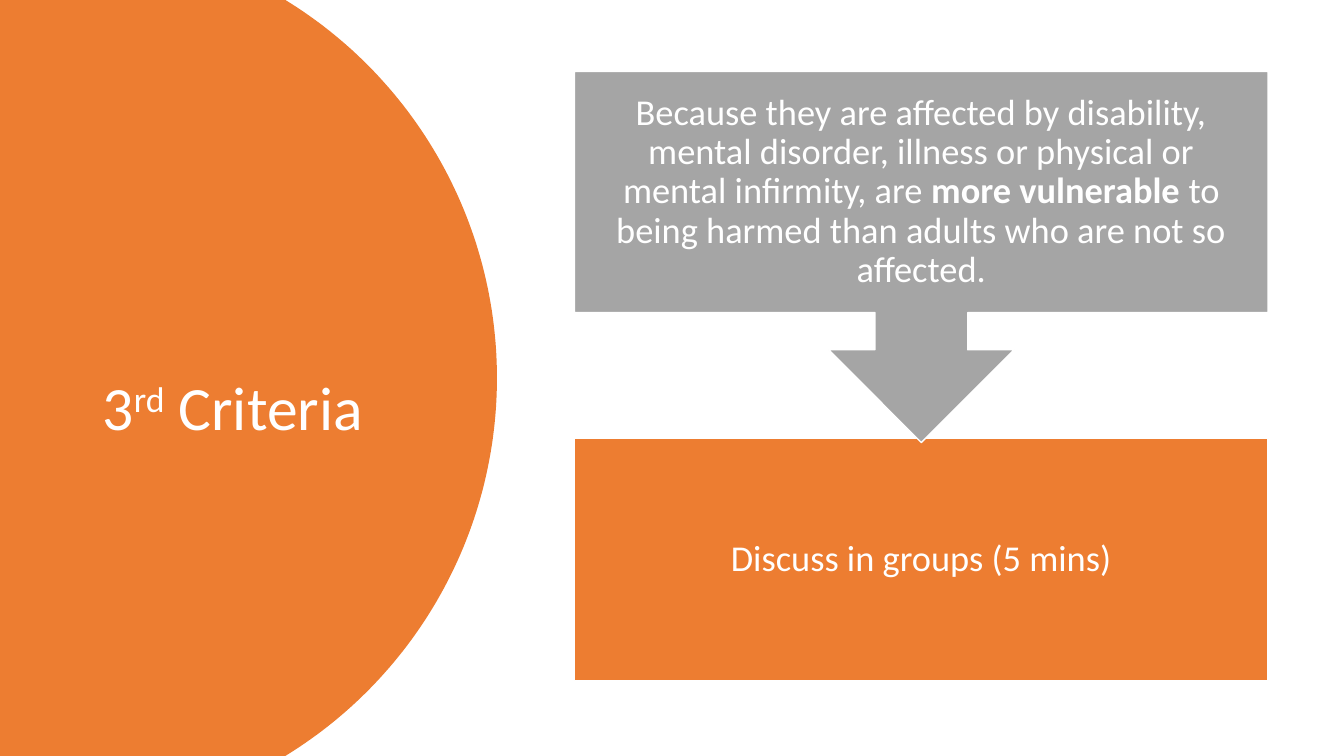
import math
from pptx import Presentation
from pptx.dml.color import RGBColor
from pptx.enum import shapes, text
from pptx.util import Pt

WHITE, ORANGE, GREY = "FFFFFF", "ED7D31", "A5A5A5"
TITLE = [("3", {}), ("rd", {"baseline": "30000"}), (" Criteria", {})]
BOXES = [
    (shapes.MSO_SHAPE.RECTANGLE, ORANGE, 313.2, 172.8,
     [("Discuss in groups (5 mins)", {})]),
    (shapes.MSO_SHAPE.DOWN_ARROW_CALLOUT, GREY, 51.1, 265,
     [("Because they are affected by disability, mental disorder, illness "
       "or physical or mental infirmity, are ", {}),
      ("more vulnerable ", {"b": "1"}),
      ("to being harmed than adults who are not so affected.", {})]),
]
BOX_LEFT, BOX_WIDTH = 410.4, 495.4
W, H = 960, 540
RADIUS, CENTRE_X = 316.7, 38.3
ARC_STEPS = 120


def color(value):
    return RGBColor.from_string(value)


def paint(sp, fill, line=None):
    sp.shadow.inherit = False
    sp.fill.solid()
    sp.fill.fore_color.rgb = color(fill)
    if line:
        sp.line.color.rgb = color(line)
        sp.line.width = Pt(1)
    else:
        sp.line.fill.background()


def write(sp, runs, size, align, margins):
    tf = sp.text_frame
    frame = {"word_wrap": True, "auto_size": text.MSO_AUTO_SIZE.NONE,
             "vertical_anchor": text.MSO_ANCHOR.MIDDLE}
    for name, value in frame.items():
        setattr(tf, name, value)
    for side, value in zip(("left", "top", "right", "bottom"), margins):
        setattr(tf, f"margin_{side}", Pt(value))
    p = tf.paragraphs[0]
    p.alignment, p.line_spacing = align, 0.9
    for words, extra in runs:
        r = p.add_run()
        r.text = words
        for name, value in {"name": "Calibri", "size": Pt(size)}.items():
            setattr(r.font, name, value)
        r.font.color.rgb = color(WHITE)
        for name, value in extra.items():
            r.font._element.set(name, value)


def add_disc(s):
    reach = math.asin(H / 2 / RADIUS)
    angles = [reach * (2 * i / ARC_STEPS - 1) for i in range(ARC_STEPS + 1)]
    arc = [(Pt(CENTRE_X + RADIUS * math.cos(a)),
            Pt(H / 2 + RADIUS * math.sin(a))) for a in angles]
    outline = s.shapes.build_freeform(0, 0)
    outline.add_line_segments(arc + [(0, Pt(H))], close=True)
    paint(outline.convert_to_shape(), ORANGE)


def add_title(s):
    sp = s.shapes.title
    place = {"left": 66.2, "top": 50.4, "width": 232.6, "height": 438.5}
    for name, value in place.items():
        setattr(sp, name, Pt(value))
    tree = s.shapes._spTree
    tree.remove(sp._element)
    tree.append(sp._element)
    write(sp, TITLE, 44, text.PP_ALIGN.LEFT, (7.2, 51.2, 7.2, 3.6))


def main():
    prs = Presentation()
    prs.slide_width, prs.slide_height = Pt(W), Pt(H)
    s = prs.slides.add_slide(prs.slide_layouts[5])
    add_disc(s)
    add_title(s)
    for kind, fill, top, height, runs in BOXES:
        sp = s.shapes.add_shape(kind, Pt(BOX_LEFT), Pt(top),
                                Pt(BOX_WIDTH), Pt(height))
        paint(sp, fill, WHITE)
        write(sp, runs, 26, text.PP_ALIGN.CENTER, (14.4,) * 4)
    prs.save("out.pptx")


if __name__ == "__main__":
    main()
